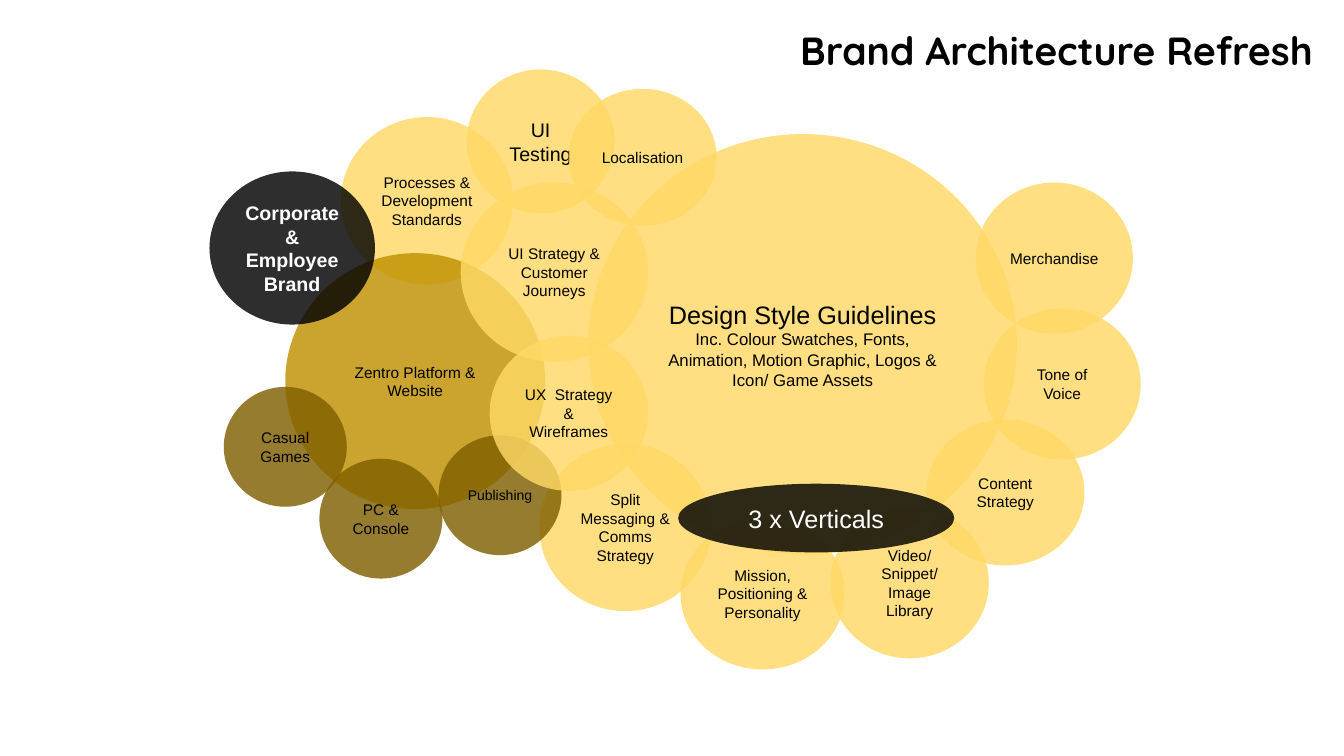
from lxml.etree import SubElement
from pptx import Presentation
from pptx.dml.color import RGBColor
from pptx.enum.shapes import MSO_SHAPE
from pptx.enum.text import MSO_ANCHOR, PP_ALIGN
from pptx.oxml.ns import qn
from pptx.util import Cm, Pt

YELLOW, GOLD, BROWN = "FFD966", "BF9000", "806000"
BLACK, WHITE = "000000", "FFFFFF"


def color(code):
    return RGBColor.from_string(code)


class Canvas:
    face = "Arial"
    head_face = "Quicksand"
    alpha = 82

    def __init__(self, slide):
        self.slide = slide

    def style(self, par, size, ink, bold, face, align):
        par.alignment = align
        font = par.font
        font.name, font.size, font.bold = face, Pt(size), bold
        font.color.rgb = color(ink)

    def title(self, text, box):
        frame = self.slide.shapes.add_textbox(*map(Cm, box)).text_frame
        frame.word_wrap = True
        frame.vertical_anchor = MSO_ANCHOR.MIDDLE
        par = frame.paragraphs[0]
        par.text = text
        par.line_spacing = 0.9
        self.style(par, 28, BLACK, True, self.head_face, PP_ALIGN.RIGHT)

    def bubble(self, lines, box, fill=YELLOW, ink=BLACK, bold=False):
        """Draw a translucent ellipse; lines holds (text, size) pairs."""
        shape = self.slide.shapes.add_shape(MSO_SHAPE.OVAL, *map(Cm, box))
        shape.shadow.inherit = False
        shape.line.fill.background()
        shape.fill.solid()
        shape.fill.fore_color.rgb = color(fill)
        tint = shape.fill._xPr.find(qn("a:solidFill"))[0]
        SubElement(tint, qn("a:alpha"), val=str(self.alpha * 1000))
        frame = shape.text_frame
        frame.word_wrap = True
        frame.vertical_anchor = MSO_ANCHOR.MIDDLE
        for i, (text, size) in enumerate(lines):
            par = frame.add_paragraph() if i else frame.paragraphs[0]
            par.text = text
            self.style(par, size, ink, bold, self.face, PP_ALIGN.CENTER)

    def topic(self, text, box, fill=YELLOW, size=11):
        self.bubble([(text, size)], box, fill)


def main():
    deck = Presentation()
    deck.slide_width, deck.slide_height = Cm(33.87), Cm(19.05)
    art = Canvas(deck.slides.add_slide(deck.slide_layouts[6]))
    art.title("Brand Architecture Refresh", (13.06, 0.74, 20.27, 1.19))

    # Outer topics at the back
    art.topic("Content Strategy", (23.34, 10.57, 3.99, 3.68))
    art.topic("Split Messaging & Comms Strategy", (13.59, 11.18, 4.34, 4.22))
    art.topic("Video/ Snippet/ Image Library", (20.93, 12.78, 3.99, 3.81))
    art.topic("UI Testing", (11.76, 1.75, 3.73, 3.63), size=14)
    art.topic("Processes & Development Standards", (8.59, 2.95, 4.34, 4.22))
    art.topic("Mission, Positioning & Personality", (17.15, 13.06, 4.14, 3.81))

    # Platform and its products
    art.topic("Zentro Platform & Website", (7.19, 6.38, 6.55, 6.45), GOLD)
    for text, left, top, size in (
        ("Publishing", 11.05, 10.97, 10),
        ("PC & Console", 8.05, 11.56, 11),
        ("Casual Games", 5.64, 9.75, 11),
    ):
        art.topic(text, (left, top, 3.1, 3.02), BROWN, size)

    # Design guidelines and neighbours
    art.topic("UI Strategy & Customer Journeys", (11.61, 4.6, 4.72, 4.52))
    art.bubble(
        [
            ("Design Style Guidelines", 18),
            ("Inc. Colour Swatches, Fonts, Animation, Motion Graphic, "
             "Logos & Icon/ Game Assets", 12),
        ],
        (14.83, 3.38, 10.8, 10.59),
    )
    art.topic("Tone of Voice", (24.79, 7.77, 3.96, 3.81))

    # Dark highlights
    art.bubble([("3 x Verticals", 18)], (17.09, 12.19, 6.96, 1.73),
               BLACK, WHITE)
    art.bubble([("Corporate & Employee Brand", 14)], (5.28, 4.32, 4.17, 3.86),
               BLACK, WHITE, True)

    # Topics in front
    art.topic("UX  Strategy & Wireframes", (12.34, 8.46, 3.99, 3.91))
    art.topic("Merchandise", (24.59, 4.6, 3.96, 3.81))
    art.topic("Localisation", (14.33, 2.24, 3.73, 3.45))

    deck.save("out.pptx")


if __name__ == "__main__":
    main()
